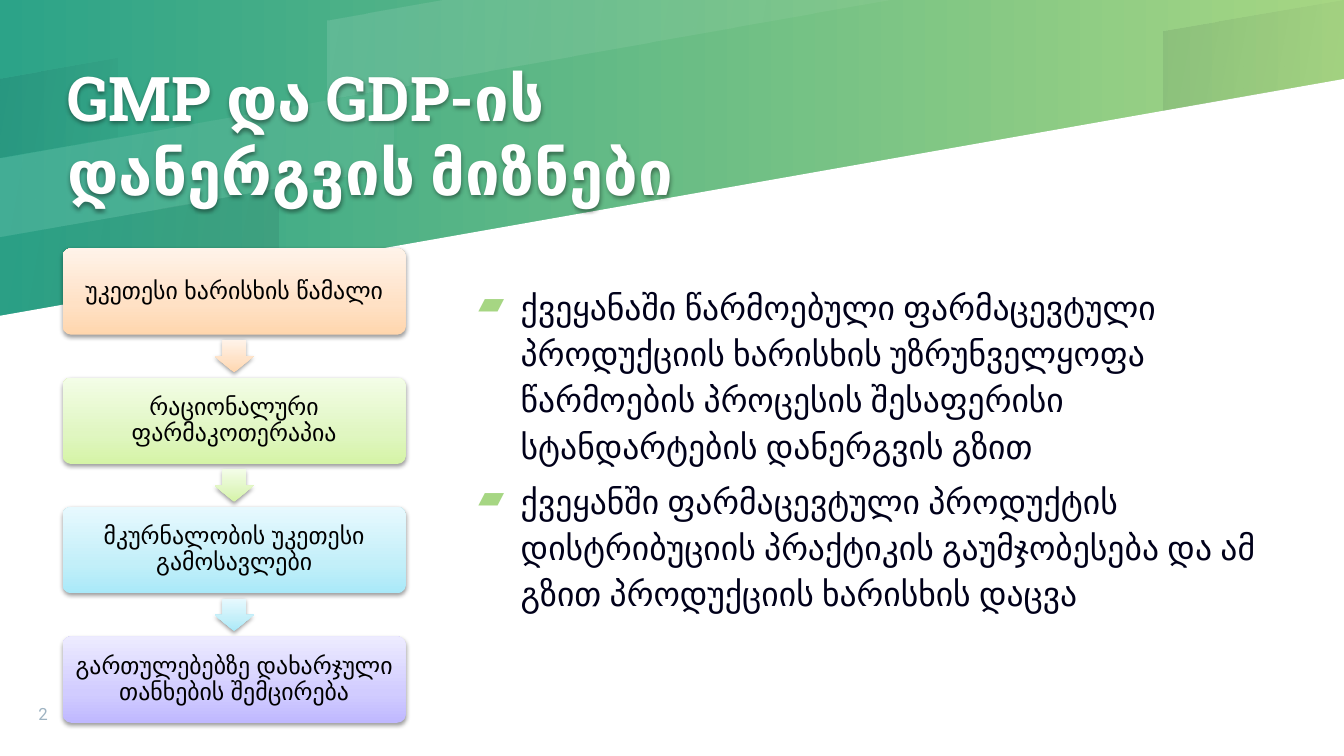
from typing import Any, NamedTuple

from lxml.etree import SubElement as Sub
from pptx import Presentation
from pptx.dml.color import RGBColor as RGB
from pptx.enum.shapes import MSO_SHAPE as Kind
from pptx.enum.text import MSO_ANCHOR as Anchor, PP_ALIGN as Align
from pptx.oxml.ns import qn
from pptx.util import Emu, Inches, Pt

# The slide is a grid of 160 columns by 90 rows of square cells.
COLS, ROWS, CELL = 160, 90, 76200

WHITE = RGB(0xFF, 0xFF, 0xFF)
BLACK = RGB(0x00, 0x00, 0x00)
NAVY = RGB(0x00, 0x00, 0x1A)
GRAY = RGB(0x9E, 0xB3, 0xC2)
TEAL = RGB(0x2C, 0xA3, 0x88)
LIME = RGB(0xA6, 0xD6, 0x83)


class Stop(NamedTuple):
    pos: int
    color: RGB
    alpha: int = 100


class Area(NamedTuple):
    col: float
    row: float
    cols: float
    rows: float

    def emu(self) -> list[Emu]:
        return [Emu(round(n * CELL)) for n in self]


class Band(NamedTuple):
    points: list[tuple[float, float]]
    color: RGB
    fade: tuple[int, int]


class Step(NamedTuple):
    text: str
    dark: RGB
    mid: RGB
    pale: RGB


class Style(NamedTuple):
    frame: dict[str, Any]
    para: dict[str, Any]
    font: dict[str, Any]
    color: RGB


def inset(size: float) -> dict[str, Any]:
    sides = ("left", "right", "top", "bottom")
    return {f"margin_{side}": Inches(size) for side in sides}


FLAT = {"word_wrap": True, **inset(0)}
TITLE = Style({**FLAT, "vertical_anchor": Anchor.MIDDLE}, {},
              {"name": "Roboto Slab", "size": Pt(44), "bold": True}, WHITE)
BODY = Style({**FLAT, "vertical_anchor": Anchor.TOP},
             {"line_spacing": 1.15, "space_before": Pt(6)},
             {"name": "Roboto", "size": Pt(24)}, NAVY)
NUMBER = Style({**FLAT, "vertical_anchor": Anchor.BOTTOM}, {},
               {"name": "Roboto", "size": Pt(12)}, GRAY)
LABEL = Style({"word_wrap": True, **inset(0.07), "vertical_anchor": Anchor.MIDDLE},
              {"alignment": Align.CENTER, "line_spacing": 0.9},
              {"name": "Arial", "size": Pt(17)}, BLACK)

PAPER = [(0, 90), (160, 90), (160, 9.4), (0, 37.6)]
BANDS = [
    Band([(53, 0), (39, 2.5), (39, 11.9), (106.4, 0)], WHITE, (12, 5)),
    Band([(0, 9.4), (0, 18.8), (14, 16.3), (14, 6.9)], NAVY, (8, 2)),
    Band([(0, 28.2), (0, 37.6), (33.1, 31.7), (33.1, 22.3)], NAVY, (2, 8)),
    Band([(160, 0), (138.5, 3.7), (138.5, 13.2), (160, 9.4)], NAVY, (8, 2)),
    Band([(0, 18.8), (0, 28.2), (46.9, 20), (46.9, 10.5)], WHITE, (12, 5)),
]

BOX = Area(7.45, 29.55, 40.85, 10.3)
PITCH = 15.4
ARROW = (4.64, 3.86)
STEPS = [
    Step("უკეთესი ხარისხის წამალი", RGB(0xFF, 0xD6, 0xAD),
         RGB(0xFF, 0xE1, 0xC5), RGB(0xFF, 0xF3, 0xE9)),
    Step("რაციონალური ფარმაკოთერაპია", RGB(0xD5, 0xF4, 0xA6),
         RGB(0xE0, 0xF6, 0xC1), RGB(0xF3, 0xFD, 0xE7)),
    Step("მკურნალობის უკეთესი გამოსავლები", RGB(0xA9, 0xE9, 0xF9),
         RGB(0xC3, 0xEF, 0xF9), RGB(0xE7, 0xF9, 0xFE)),
    Step("გართულებებზე დახარჯული თანხების შემცირება", RGB(0xBF, 0xB8, 0xFF),
         RGB(0xD1, 0xCC, 0xFF), RGB(0xED, 0xEB, 0xFF)),
]
GOALS = [
    "ქვეყანაში წარმოებული ფარმაცევტული პროდუქციის ხარისხის უზრუნველყოფა "
    "წარმოების პროცესის შესაფერისი სტანდარტების დანერგვის გზით",
    "ქვეყანში ფარმაცევტული პროდუქტის დისტრიბუციის პრაქტიკის გაუმჯობესება "
    "და ამ გზით პროდუქციის ხარისხის დაცვა",
]


def apply(target: Any, values: dict[str, Any]) -> None:
    for name, value in values.items():
        setattr(target, name, value)


def tint(parent: Any, color: RGB, alpha: int) -> None:
    """Append a colour with its opacity in percent."""
    node = Sub(parent, qn("a:srgbClr"), val=str(color))
    if alpha < 100:
        Sub(node, qn("a:alpha"), val=str(alpha * 1000))


def blend(owner: Any, fill: Any, stops: list[Stop], angle: int) -> None:
    """Give the fill of owner a gradient, its angle counted clockwise."""
    fill.gradient()
    fill.gradient_angle = -angle % 360
    nodes = owner.element.find(".//" + qn("a:gsLst"))
    for node in list(nodes):
        nodes.remove(node)
    for stop in stops:
        node = Sub(nodes, qn("a:gs"), pos=str(stop.pos * 1000))
        tint(node, stop.color, stop.alpha)


def shade(shape: Any) -> None:
    """Cast a soft shadow straight down."""
    shape.shadow.inherit = False
    node = Sub(shape.element.find(".//" + qn("a:effectLst")), qn("a:outerShdw"),
               blurRad="40000", dist="20000", dir="5400000", rotWithShape="0")
    tint(node, BLACK, 38)


def write(shape: Any, lines: list[str], style: Style) -> None:
    frame = shape.text_frame
    frame.text = "\n".join(lines)
    apply(frame, style.frame)
    for para in frame.paragraphs:
        apply(para, style.para)
        apply(para.font, style.font)
        for run in para.runs:
            apply(run.font, style.font)
            run.font.color.rgb = style.color


def note(shapes: Any, area: Area, lines: list[str], style: Style) -> Any:
    """Add a text box."""
    box = shapes.add_textbox(*area.emu())
    write(box, lines, style)
    return box


def bullet(para: Any) -> None:
    props = para._p.get_or_add_pPr()
    props.set("marL", str(Inches(0.5)))
    props.set("indent", str(Inches(-0.42)))
    tint(Sub(props, qn("a:buClr")), LIME, 100)
    Sub(props, qn("a:buChar"), char="▰")


def outline(shapes: Any, points: list[tuple[float, float]]) -> Any:
    """Add a closed polygon with no line and no shadow."""
    first, *rest = [(round(x * CELL), round(y * CELL)) for x, y in points]
    path = shapes.build_freeform(*first)
    path.add_line_segments(rest, close=True)
    shape = path.convert_to_shape()
    shape.line.fill.background()
    shape.shadow.inherit = False
    return shape


def block(shapes: Any, kind: Kind, area: Area, adjust: list[float], step: Step) -> Any:
    """Add a shaded shape in the colours of a step."""
    shape = shapes.add_shape(kind, *area.emu())
    for i, value in enumerate(adjust):
        shape.adjustments[i] = value
    stops = [Stop(0, step.dark), Stop(35, step.mid), Stop(100, step.pale)]
    blend(shape, shape.fill, stops, 270)
    shape.line.fill.background()
    shade(shape)
    return shape


def flow(shapes: Any) -> None:
    """Stack the steps, with an arrow in each gap."""
    wide, high = ARROW
    for i, step in enumerate(STEPS):
        area = BOX._replace(row=BOX.row + i * PITCH)
        box = block(shapes, Kind.ROUNDED_RECTANGLE, area, [0.1], step)
        write(box, [step.text], LABEL)
        if i < len(STEPS) - 1:
            mid = area.row + (BOX.rows + PITCH) / 2
            spot = Area(BOX.col + (BOX.cols - wide) / 2, mid - high / 2, wide, high)
            block(shapes, Kind.DOWN_ARROW, spot, [0.6, 0.5], step)


def main() -> None:
    deck = Presentation()
    deck.slide_width, deck.slide_height = Emu(COLS * CELL), Emu(ROWS * CELL)
    slide = deck.slides.add_slide(deck.slide_layouts[6])
    shapes = slide.shapes
    blend(slide, slide.background.fill, [Stop(0, TEAL), Stop(100, LIME)], 0)

    paper = outline(shapes, PAPER)
    paper.fill.solid()
    paper.fill.fore_color.rgb = WHITE
    for band in BANDS:
        start, end = band.fade
        stops = [Stop(0, band.color, start), Stop(100, band.color, end)]
        shape = outline(shapes, band.points)
        blend(shape, shape.fill, stops, 10)

    shade(note(shapes, Area(8, 0, 96, 31.8), ["GMP და GDP-ის დანერგვის მიზნები"], TITLE))
    body = note(shapes, Area(56, 33.4, 96, 48.4), GOALS, BODY)
    for para in body.text_frame.paragraphs:
        bullet(para)
    note(shapes, Area(4.56, 81.84, 8.4, 4.32), ["2"], NUMBER)
    flow(shapes)
    deck.save("out.pptx")


if __name__ == "__main__":
    main()
